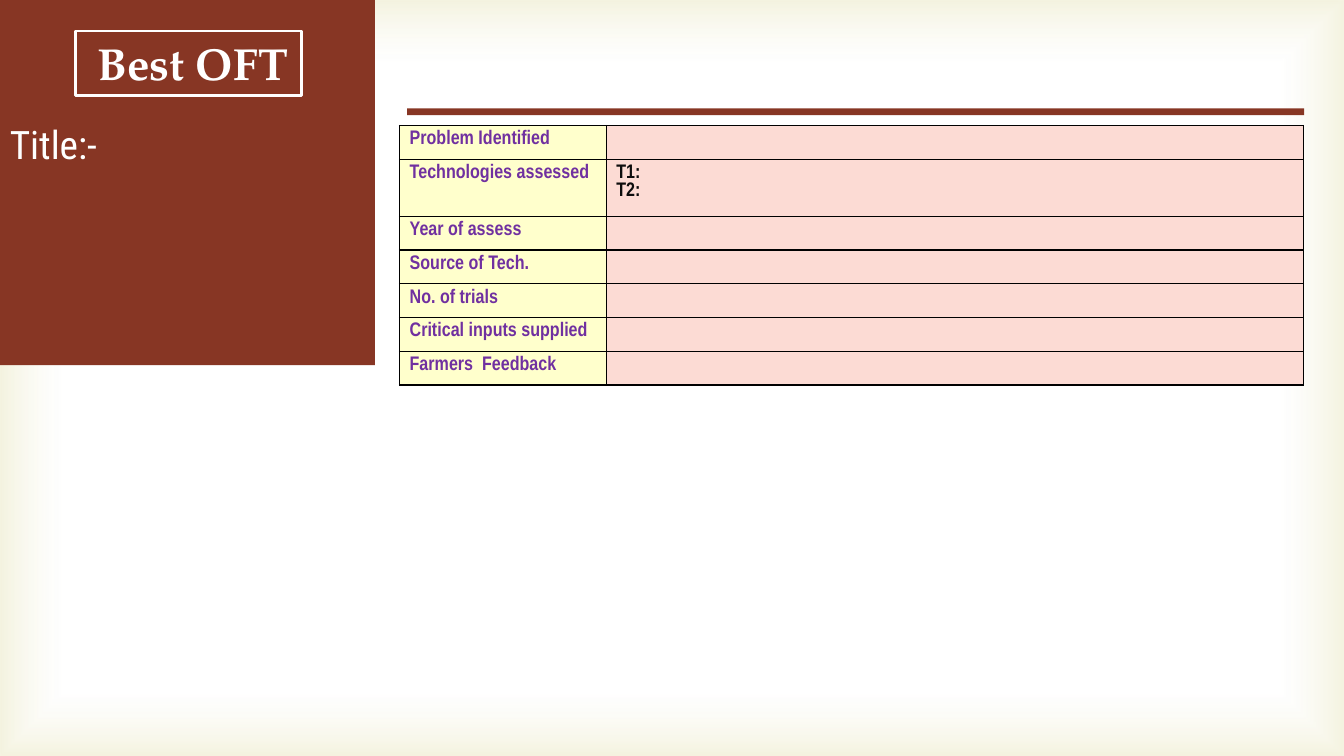
from lxml.etree import SubElement
from pptx import Presentation
from pptx.dml.color import RGBColor
from pptx.enum.shapes import MSO_SHAPE as Shape
from pptx.enum.text import MSO_ANCHOR as Anchor, PP_ALIGN as Align
from pptx.oxml import parse_xml
from pptx.oxml.ns import nsdecls, qn
from pptx.util import Cm, Pt

WHITE = RGBColor(0xFF, 0xFF, 0xFF)
BLACK = RGBColor(0x00, 0x00, 0x00)
INK = RGBColor(0x0D, 0x0D, 0x0D)
BRICK = RGBColor(0x87, 0x36, 0x24)
PURPLE = RGBColor(0x70, 0x30, 0xA0)
CREAM = RGBColor(0xFF, 0xFF, 0xCC)
PINK = RGBColor(0xFC, 0xDB, 0xD4)
KHAKI = RGBColor(0xD1, 0xCA, 0x75)

TITLE_FONT = "TeX Gyre Pagella"
PANEL_FONT = "Roboto Condensed"
TABLE_FONT = "Arial Narrow"
TABLE_SIZE = Pt(14)

SLIDE_WIDTH, SLIDE_HEIGHT = Cm(33.87), Cm(19.05)
ROW_HEIGHT, TALL_ROW_HEIGHT = Cm(0.85), Cm(1.44)

# Row label and the lines of its value
TRIAL_ROWS = [
    ("Problem Identified", []),
    ("Technologies assessed", ["T1:", "T2:"]),
    ("Year of assess", []),
    ("Source of Tech.", []),
    ("No. of trials", []),
    ("Critical inputs supplied", []),
    ("Farmers  Feedback", []),
]


def add_rectangle(slide, left, top, width, height, fill=None, line=None):
    shape = slide.shapes.add_shape(Shape.RECTANGLE, left, top, width, height)
    shape.shadow.inherit = False
    if fill is None:
        shape.fill.background()
    else:
        shape.fill.solid()
        shape.fill.fore_color.rgb = fill
    if line is None:
        shape.line.fill.background()
    else:
        shape.line.color.rgb = line
        shape.line.width = Pt(2)
    return shape


def add_edge_glow(slide):
    """Cover the slide with a rectangular gradient that tints its edges."""
    glow = add_rectangle(slide, 0, 0, SLIDE_WIDTH, SLIDE_HEIGHT, WHITE)
    stops = "".join(
        f'<a:gs pos="{position}"><a:srgbClr val="{color}">'
        f'<a:alpha val="{alpha}"/></a:srgbClr></a:gs>'
        for position, color, alpha in [(83000, WHITE, 11000), (100000, KHAKI, 23000)]
    )
    gradient = parse_xml(
        f'<a:gradFill {nsdecls("a")} rotWithShape="1"><a:gsLst>{stops}</a:gsLst>'
        '<a:path path="rect">'
        '<a:fillToRect l="50000" t="50000" r="50000" b="50000"/>'
        '</a:path></a:gradFill>'
    )
    solid = glow.element.find(".//" + qn("a:solidFill"))
    solid.getparent().replace(solid, gradient)


def add_run(paragraph, text, font, size, color, bold=False):
    run = paragraph.add_run()
    run.text = text
    run.font.name = font
    run.font.size = size
    run.font.bold = bold
    run.font.color.rgb = color


def format_title(slide):
    title = slide.shapes.title
    title.left, title.top, title.width, title.height = Cm(2), Cm(0.77), Cm(5.52), Cm(1.63)
    title.text_frame.word_wrap = True
    title.text_frame.vertical_anchor = Anchor.TOP
    paragraph = title.text_frame.paragraphs[0]
    paragraph.alignment = Align.RIGHT
    add_run(paragraph, "Best OFT", TITLE_FONT, Pt(32), WHITE, bold=True)
    # Bring the title in front of the panel
    title.element.getparent().append(title.element)


def add_subject(slide):
    box = slide.shapes.add_textbox(0, Cm(2.9), Cm(9.32), Cm(1.45))
    box.text_frame.word_wrap = True
    box.text_frame.vertical_anchor = Anchor.MIDDLE
    add_run(box.text_frame.paragraphs[0], "Title:-", PANEL_FONT, Pt(28), WHITE)


def add_borders(cell):
    properties = cell._tc.get_or_add_tcPr()
    for side in ("lnL", "lnR", "lnT", "lnB"):
        border = SubElement(properties, qn(f"a:{side}"), w=str(Pt(1)))
        SubElement(SubElement(border, qn("a:solidFill")), qn("a:srgbClr"), val=str(BLACK))


def fill_cell(cell, lines, fill, color, alignment):
    add_borders(cell)
    cell.fill.solid()
    cell.fill.fore_color.rgb = fill
    frame = cell.text_frame
    for index, line in enumerate(lines or [""]):
        paragraph = frame.paragraphs[0] if index == 0 else frame.add_paragraph()
        paragraph.alignment = alignment
        if line:
            add_run(paragraph, line, TABLE_FONT, TABLE_SIZE, color, bold=True)
        else:
            # Size of an empty line, so that the row keeps its height
            SubElement(paragraph._p, qn("a:endParaRPr"), sz=str(int(TABLE_SIZE.pt * 100)))


def add_trial_table(slide):
    tall_rows = sum(len(lines) > 1 for _, lines in TRIAL_ROWS)
    height = ROW_HEIGHT * (len(TRIAL_ROWS) - tall_rows) + TALL_ROW_HEIGHT * tall_rows
    table = slide.shapes.add_table(
        len(TRIAL_ROWS), 2, Cm(10.07), Cm(3.16), Cm(22.79), height
    ).table
    table.first_row = table.horz_banding = False
    table.columns[0].width, table.columns[1].width = Cm(5.21), Cm(17.58)
    for index, (label, lines) in enumerate(TRIAL_ROWS):
        table.rows[index].height = TALL_ROW_HEIGHT if len(lines) > 1 else ROW_HEIGHT
        fill_cell(table.cell(index, 0), [label], CREAM, PURPLE, Align.LEFT)
        fill_cell(table.cell(index, 1), lines, PINK, INK, Align.JUSTIFY)


def main():
    presentation = Presentation()
    presentation.slide_width, presentation.slide_height = SLIDE_WIDTH, SLIDE_HEIGHT
    slide = presentation.slides.add_slide(presentation.slide_layouts[5])

    # Background and title panel
    add_edge_glow(slide)
    add_rectangle(slide, 0, 0, Cm(9.45), Cm(9.2), fill=BRICK)
    add_rectangle(slide, Cm(1.9), Cm(0.78), Cm(5.7), Cm(1.63), line=WHITE)
    format_title(slide)
    add_subject(slide)

    # Rule and table
    add_rectangle(slide, Cm(10.26), Cm(2.73), Cm(22.61), Cm(0.17), fill=BRICK)
    add_trial_table(slide)

    presentation.save("out.pptx")


if __name__ == "__main__":
    main()
